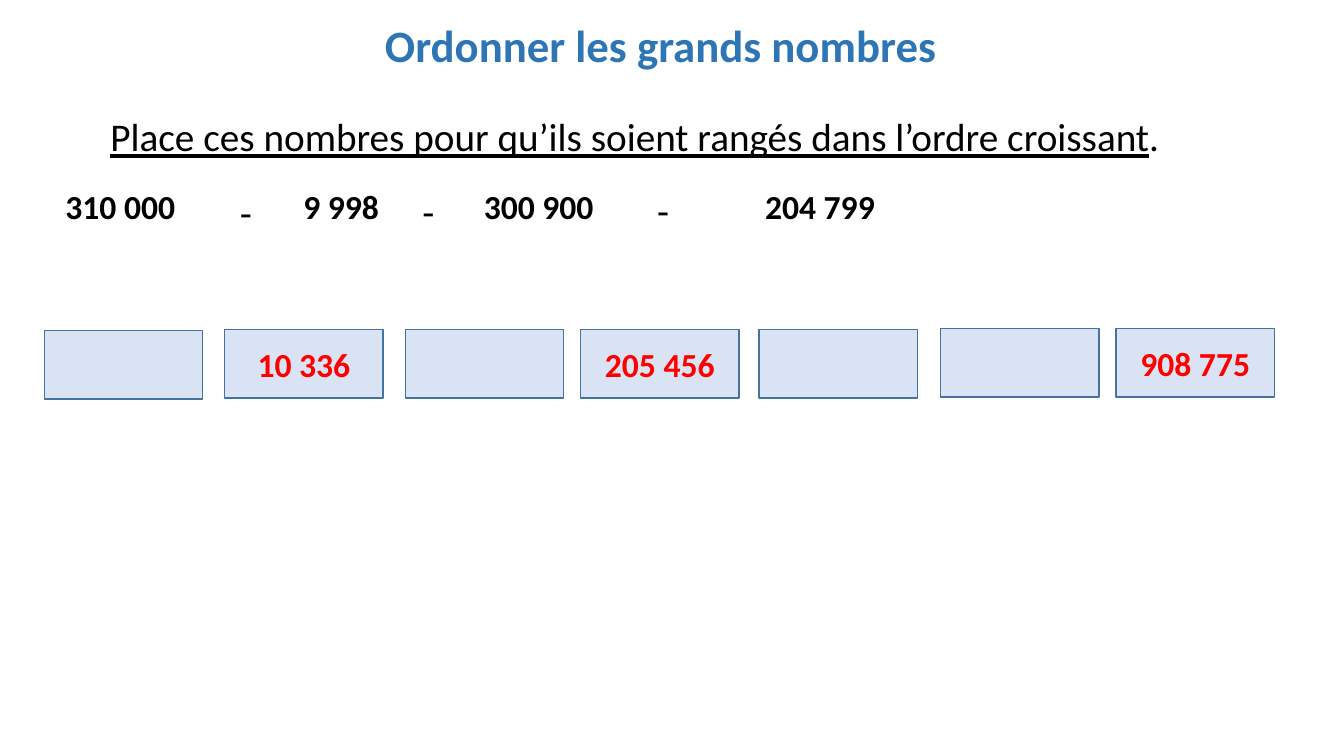
import pptx
import pptx.util
import pptx.dml.color
import pptx.enum.shapes
import pptx.enum.text
from pptx.util import Inches

CENTER = pptx.enum.text.PP_ALIGN.CENTER


def rgb(value):
    return pptx.dml.color.RGBColor.from_string(value)


def add_text(left, top, width, height, text, size, color="000000", bold=False):
    """Add a wrapping text box and return its paragraph."""
    tf = s.shapes.add_textbox(Inches(left), Inches(top), Inches(width), Inches(height)).text_frame
    tf.word_wrap = True
    p = tf.paragraphs[0]
    p.text = text
    p.font.name = "Calibri"
    p.font.size = pptx.util.Pt(size)
    p.font.bold = bold
    p.font.color.rgb = rgb(color)
    return p


prs = pptx.Presentation()
prs.slide_width, prs.slide_height = Inches(13.33), Inches(7.5)
s = prs.slides.add_slide(prs.slide_layouts[6])

# Title and instruction
title = add_text(3.72, 0.19, 5.86, 0.88, "Ordonner les grands nombres", 32, "2E75B6", True)
title.line_spacing = 0.9

instruction = add_text(0.55, 1.07, 11.49, 0.57,
                       "Place ces nombres pour qu’ils soient rangés dans l’ordre croissant", 28)
instruction.alignment = CENTER
instruction.runs[0].font.underline = True
instruction.add_run().text = "."

# Ordered boxes, some already filled in
boxes = [(0.44, 3.28, ""), (2.23, 3.27, "10 336"), (4.02, 3.27, ""), (5.76, 3.27, "205 456"),
         (7.53, 3.27, ""), (9.33, 3.26, ""), (11.07, 3.26, "908 775")]
for left, top, number in boxes:
    sp = s.shapes.add_shape(pptx.enum.shapes.MSO_SHAPE.RECTANGLE,
                            Inches(left), Inches(top), Inches(1.57), Inches(0.68))
    sp.shadow.inherit = False
    sp.fill.solid()
    sp.fill.fore_color.rgb = rgb("DAE3F3")
    sp.line.color.rgb = rgb("43739E")
    sp.line.width = pptx.util.Pt(1)
    if number:
        sp.text_frame.vertical_anchor = pptx.enum.text.MSO_ANCHOR.MIDDLE
        p = sp.text_frame.paragraphs[0]
        p.text = number
        p.alignment = CENTER
        p.font.name = "Calibri"
        p.font.size = pptx.util.Pt(24)
        p.font.bold = True
        p.font.color.rgb = rgb("FF0000")

# Numbers to place, separated by dashes
for left, width, number in [(0.55, 1.92, "310 000"), (2.91, 1.57, "9 998"),
                            (4.7, 1.57, "300 900"), (7.49, 1.57, "204 799")]:
    add_text(left, 1.8, width, 0.5, number, 24, bold=True)
for left, top, width in [(2.28, 1.82, 0.55), (4.09, 1.81, 0.45), (6.42, 1.8, 0.45)]:
    add_text(left, top, width, 0.57, "-", 28)

prs.save("out.pptx")
